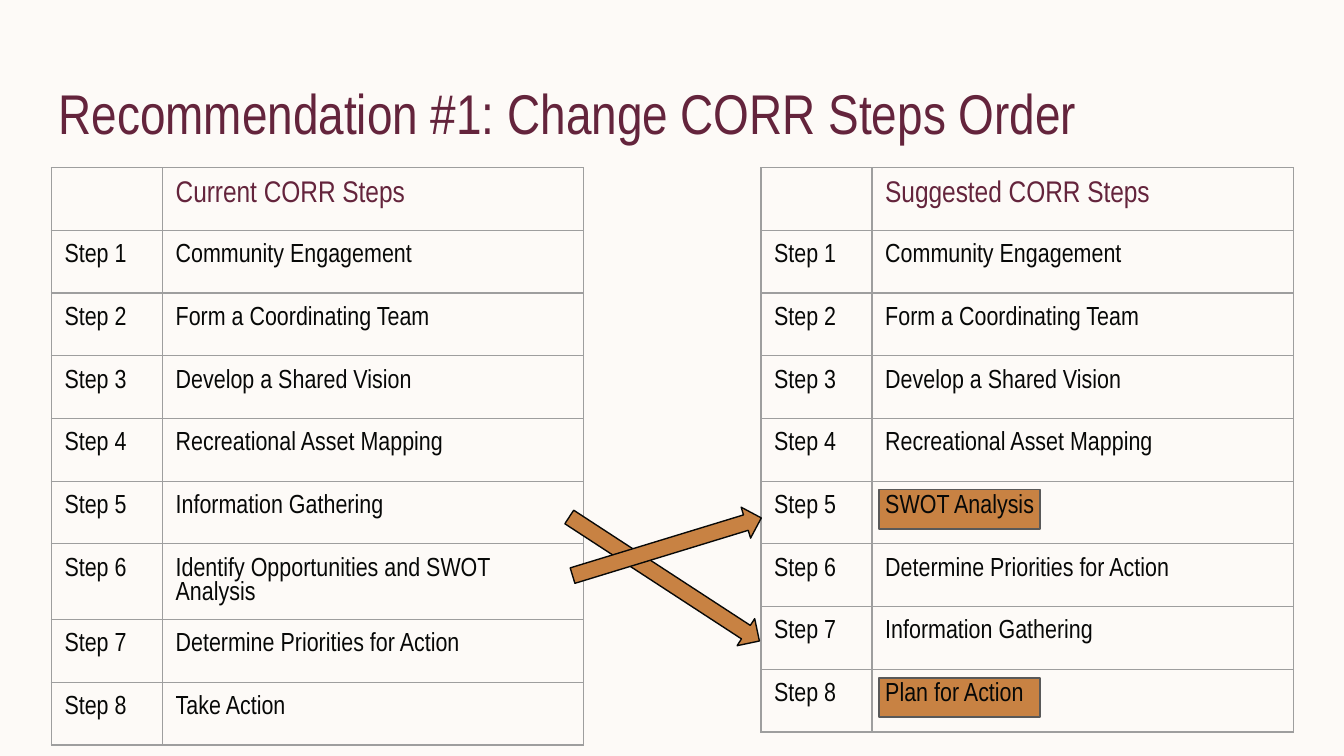
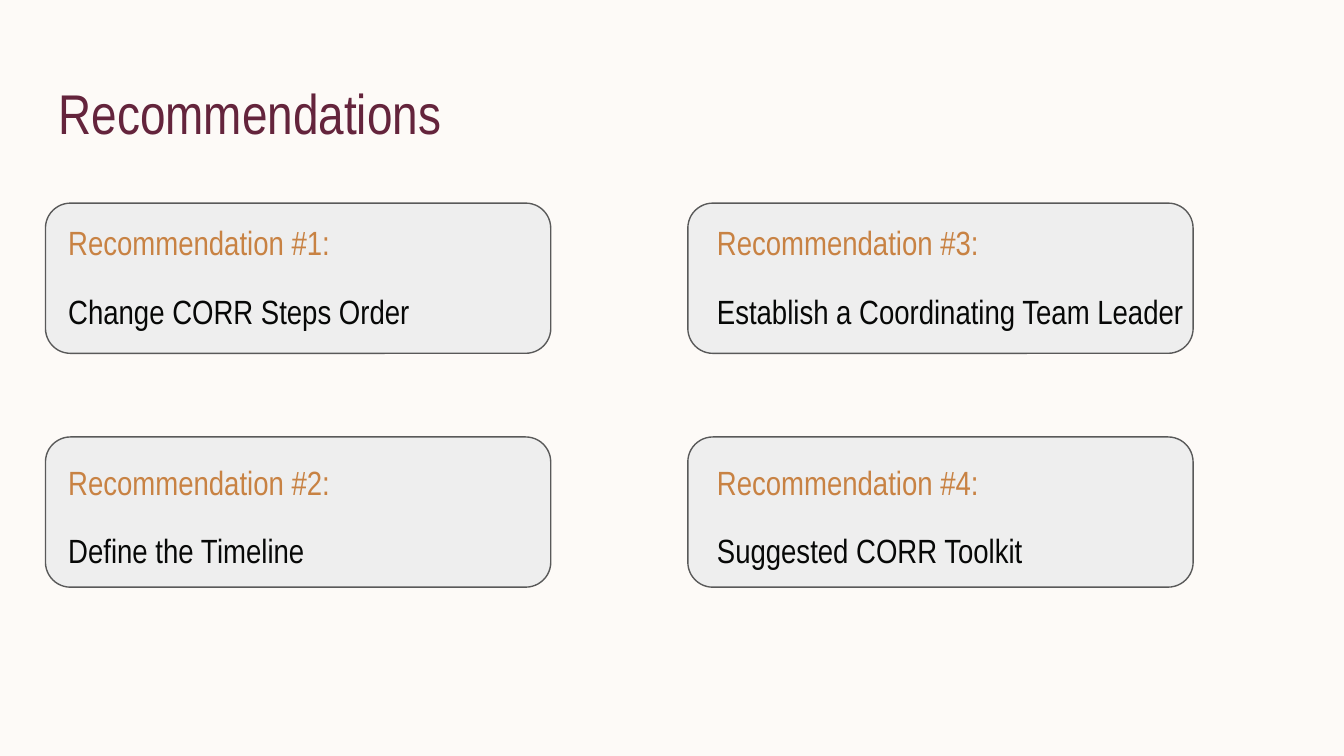
from lxml.etree import SubElement
from pptx import Presentation
from pptx.dml.color import RGBColor
from pptx.enum.shapes import MSO_SHAPE as Preset
from pptx.enum.text import MSO_ANCHOR as Anchor
from pptx.oxml.ns import qn
from pptx.util import Cm, Pt

COLORS = {
    "paper": "FDFAF7",
    "plum": "64243C",
    "ochre": "C88243",
    "ink": "070807",
    "card": "EEEEEE",
    "outline": "595959",
    "grid": "9E9E9E",
}
FONT = "Arial Narrow"
INSET = Cm(0.25)

# Step tables: column widths, total height and row count in cm
STEP_COLUMNS = (2.1, 7.96)
STEPS_HEIGHT = 10.67
STEP_ROWS = 9
ROW_HEIGHT = STEPS_HEIGHT / STEP_ROWS

SHARED_STEPS = [
    "Community Engagement",
    "Form a Coordinating Team",
    "Develop a Shared Vision",
    "Recreational Asset Mapping",
]
CURRENT_STEPS = SHARED_STEPS + [
    "Information Gathering",
    "Identify Opportunities and SWOT Analysis",
    "Determine Priorities for Action",
    "Take Action",
]
SUGGESTED_STEPS = SHARED_STEPS + [
    "SWOT Analysis",
    "Determine Priorities for Action",
    "Information Gathering",
    "Plan for Action",
]
RECOMMENDATIONS = [
    "Change CORR Steps Order",
    "Define the Timeline",
    "Establish a Coordinating Team Leader",
    "Suggested CORR Toolkit",
]


def rgb(color):
    return RGBColor.from_string(COLORS[color])


def style_runs(paragraph, size, color):
    for run in paragraph.runs:
        run.font.name = FONT
        run.font.size = Pt(size)
        run.font.color.rgb = rgb(color)


def add_text(slide, left, top, width, height):
    """Add an empty wrapping text box and return its text frame."""
    frame = slide.shapes.add_textbox(
        Cm(left), Cm(top), Cm(width), Cm(height)).text_frame
    frame.word_wrap = True
    frame.vertical_anchor = Anchor.TOP
    frame.margin_left = frame.margin_right = INSET
    frame.margin_top = frame.margin_bottom = INSET
    return frame


def add_block(slide, preset, left, top, width, height, fill, line):
    block = slide.shapes.add_shape(
        preset, Cm(left), Cm(top), Cm(width), Cm(height))
    block.shadow.inherit = False
    block.fill.solid()
    block.fill.fore_color.rgb = rgb(fill)
    block.line.color.rgb = rgb(line)
    block.line.width = Pt(0.75)
    return block


def add_titled_slide(prs, title):
    slide = prs.slides.add_slide(prs.slide_layouts[6])
    slide.background.fill.solid()
    slide.background.fill.fore_color.rgb = rgb("paper")
    frame = add_text(slide, 0.86, 1.24, 23.67, 1.6)
    frame.text = title
    style_runs(frame.paragraphs[0], 30, "plum")
    return slide


def add_borders(cell):
    properties = cell._tc.get_or_add_tcPr()
    for position, side in enumerate(("a:lnL", "a:lnR", "a:lnT", "a:lnB")):
        border = SubElement(properties, qn(side), w=str(Pt(0.75)))
        fill = SubElement(border, qn("a:solidFill"))
        SubElement(fill, qn("a:srgbClr"), val=COLORS["grid"])
        # Borders come before the fill in the cell properties
        properties.insert(position, border)


def fill_cell(cell, text, size, color):
    cell.text = text
    cell.margin_left = cell.margin_right = INSET
    cell.margin_top = cell.margin_bottom = INSET
    cell.vertical_anchor = Anchor.TOP
    cell.fill.background()
    paragraph = cell.text_frame.paragraphs[0]
    paragraph.font.size = Pt(size)
    paragraph.line_spacing = Pt(round(size * 0.94, 1))
    style_runs(paragraph, size, color)
    add_borders(cell)


def add_steps(slide, left, top, heading, steps, highlighted=()):
    """Table of numbered steps, with plates behind the highlighted ones."""
    for number in highlighted:
        add_block(slide, Preset.RECTANGLE, left + 2.23,
                  top + number * ROW_HEIGHT + 0.16, 3.05, 0.74,
                  "ochre", "outline")

    table = slide.shapes.add_table(
        STEP_ROWS, len(STEP_COLUMNS), Cm(left), Cm(top),
        Cm(sum(STEP_COLUMNS)), Cm(STEPS_HEIGHT)).table
    table.first_row = table.horz_banding = False
    for column, width in zip(table.columns, STEP_COLUMNS):
        column.width = Cm(width)
    for row in table.rows:
        row.height = Cm(ROW_HEIGHT)

    fill_cell(table.cell(0, 0), "", 16, "plum")
    fill_cell(table.cell(0, 1), heading, 16, "plum")
    for number, step in enumerate(steps, start=1):
        fill_cell(table.cell(number, 0), f"Step {number}", 14, "ink")
        fill_cell(table.cell(number, 1), step, 14, "ink")


def add_swap_arrows(slide, left, top):
    """Crossing arrows: offset x, offset y, length, rotation."""
    for x, y, length, angle in ((0, 0.61, 4.29, 33.1), (0.33, 0, 3.73, 343)):
        arrow = add_block(slide, Preset.RIGHT_ARROW, left + x, top + y,
                          length, 0.61, "ochre", "ink")
        arrow.rotation = angle


def add_recommendation(slide, left, top, text_x, text_y, number, advice):
    """Rounded card with its text at an offset from the card's corner."""
    add_block(slide, Preset.ROUNDED_RECTANGLE, left, top, 9.55, 2.84,
              "card", "outline")
    frame = add_text(slide, left + text_x, top + text_y, 11.1, 3.68)
    frame.text = f"Recommendation #{number}:\n{advice}"
    label, body = frame.paragraphs
    label.line_spacing = body.line_spacing = 1.15
    body.space_before = body.space_after = Pt(12)
    style_runs(label, 18, "ochre")
    style_runs(body, 18, "ink")


def build_order_slide(prs):
    slide = add_titled_slide(prs, "Recommendation #1: Change CORR Steps Order")
    add_steps(slide, 14.38, 3.17, "Suggested CORR Steps", SUGGESTED_STEPS,
              highlighted=(5, 8))
    add_steps(slide, 0.97, 3.17, "Current CORR Steps", CURRENT_STEPS)
    add_swap_arrows(slide, 10.41, 10.03)


def build_recommendations_slide(prs):
    slide = add_titled_slide(prs, "Recommendations")
    # Cards run down the left column, then down the right one
    columns = ((0.86, 0.18), (13, 0.3))
    rows = ((3.84, 0), (8.26, 0.1))
    for index, advice in enumerate(RECOMMENDATIONS):
        left, text_x = columns[index // 2]
        top, text_y = rows[index % 2]
        add_recommendation(slide, left, top, text_x, text_y, index + 1, advice)


def main():
    prs = Presentation()
    prs.slide_width, prs.slide_height = Cm(25.4), Cm(14.29)
    build_order_slide(prs)
    build_recommendations_slide(prs)
    prs.save("out.pptx")


if __name__ == "__main__":
    main()
